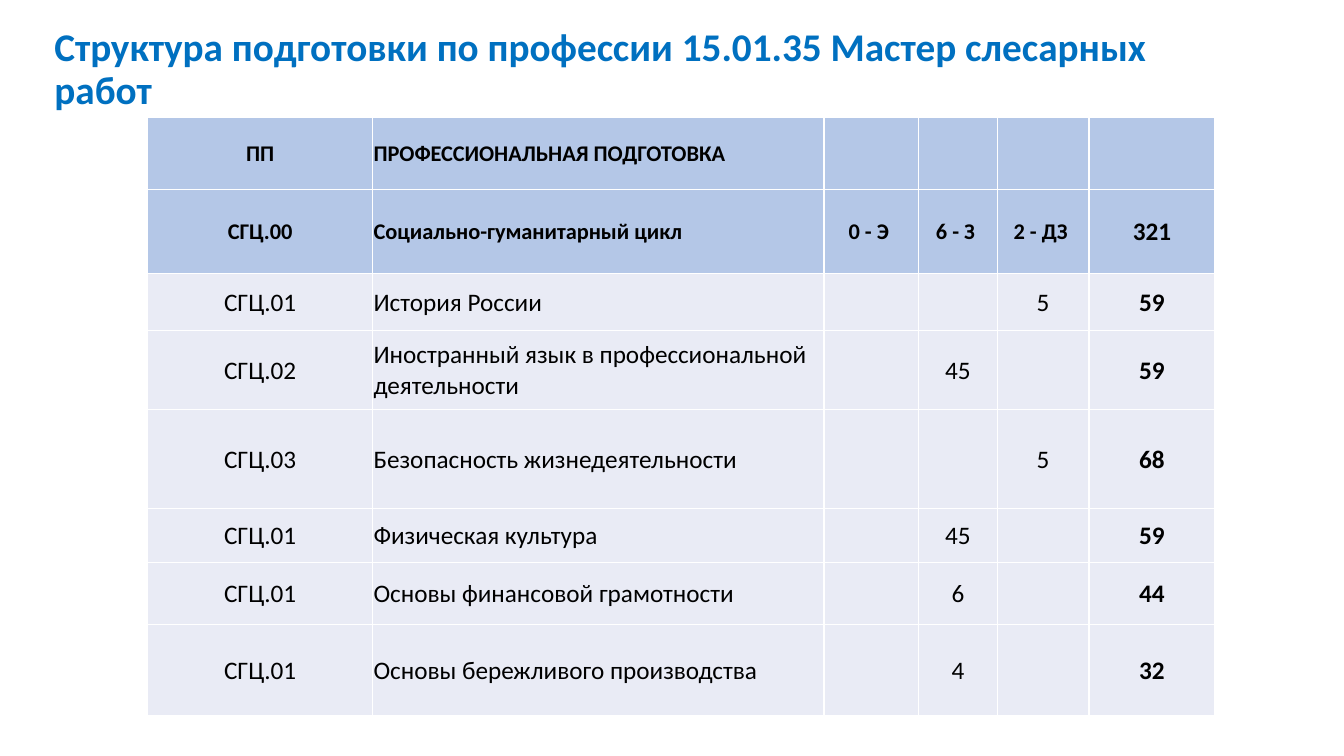
from dataclasses import dataclass

from lxml.etree import SubElement
from pptx import Presentation
from pptx.dml.color import RGBColor
from pptx.enum.text import MSO_ANCHOR, MSO_AUTO_SIZE, PP_ALIGN
from pptx.oxml import parse_xml
from pptx.oxml.ns import nsdecls, qn
from pptx.util import Inches, Pt


@dataclass(frozen=True)
class Theme:
    font: str = "Calibri"
    title_color: str = "0070C0"
    text_color: str = "000000"
    header_fill: str = "B4C7E7"
    row_fill: str = "E9EBF5"
    border_color: str = "FFFFFF"
    title_size: int = 28
    header_size: int = 16
    body_size: int = 18


@dataclass(frozen=True)
class Box:
    left: int
    top: int
    width: int
    height: int


THEME = Theme()
SLIDE_WIDTH, SLIDE_HEIGHT = Inches(13.33), Inches(7.5)

TITLE = "Структура подготовки по профессии 15.01.35 Мастер слесарных работ"
HEADER_ROWS = 2
NAME_COLUMN, HOURS_COLUMN = 1, 5
# Relative widths of the columns and heights of the rows
COLUMN_SHARES = [2.23, 4.48, 0.94, 0.78, 0.91, 1.25]
ROW_SHARES = [0.72, 0.83, 0.56, 0.79, 0.98, 0.53, 0.62, 0.9]
CURRICULUM = [
    ["ПП", "ПРОФЕССИОНАЛЬНАЯ ПОДГОТОВКА", "", "", "", ""],
    ["СГЦ.00", "Социально-гуманитарный цикл", "0 - Э ", "6 - З ", "2 - ДЗ ", "321"],
    ["СГЦ.01", "История России", "", "", "5", "59"],
    ["СГЦ.02", "Иностранный язык в профессиональной деятельности", "", "45", "", "59"],
    ["СГЦ.03", "Безопасность жизнедеятельности", "", "", "5", "68"],
    ["СГЦ.01", "Физическая культура", "", "45", "", "59"],
    ["СГЦ.01", "Основы финансовой грамотности", "", "6", "", "44"],
    ["СГЦ.01", "Основы бережливого производства", "", "4", "", "32"],
]


def share_box(left, top, width, height):
    """Turn shares of the slide's size into a box."""
    return Box(int(SLIDE_WIDTH * left), int(SLIDE_HEIGHT * top),
               int(SLIDE_WIDTH * width), int(SLIDE_HEIGHT * height))


def set_font(para, size, color, bold):
    font = para.font
    font.name, font.size, font.bold = THEME.font, Pt(size), bold
    font.color.rgb = RGBColor.from_string(color)


def add_borders(cell):
    properties = cell._tc.get_or_add_tcPr()
    for index, side in enumerate(("lnL", "lnR", "lnT", "lnB")):
        line = parse_xml(f'<a:{side} {nsdecls("a")} w="{Pt(1)}"/>')
        fill = SubElement(line, qn("a:solidFill"))
        SubElement(fill, qn("a:srgbClr"), val=THEME.border_color)
        properties.insert(index, line)


def fill_title(page, box):
    title = page.shapes.title
    title.left, title.top, title.width, title.height = box.left, box.top, box.width, box.height
    frame = title.text_frame
    frame.text = TITLE
    frame.word_wrap = True
    frame.auto_size = MSO_AUTO_SIZE.NONE
    frame.vertical_anchor = MSO_ANCHOR.MIDDLE
    para = frame.paragraphs[0]
    para.alignment, para.line_spacing = PP_ALIGN.LEFT, 0.9
    set_font(para, THEME.title_size, THEME.title_color, True)


def fill_cell(cell, text, row, column):
    is_header, is_hours = row < HEADER_ROWS, column == HOURS_COLUMN
    cell.fill.solid()
    cell.fill.fore_color.rgb = RGBColor.from_string(
        THEME.header_fill if is_header else THEME.row_fill)
    cell.margin_left = cell.margin_right = cell.margin_top = Inches(0.01)
    cell.margin_bottom = 0
    cell.vertical_anchor = MSO_ANCHOR.MIDDLE
    cell.text = text
    para = cell.text_frame.paragraphs[0]
    para.alignment = PP_ALIGN.LEFT if column == NAME_COLUMN else PP_ALIGN.CENTER
    size = THEME.header_size if is_header and not is_hours else THEME.body_size
    set_font(para, size, THEME.text_color, is_header or is_hours)
    add_borders(cell)


def add_curriculum(page, box):
    table = page.shapes.add_table(len(ROW_SHARES), len(COLUMN_SHARES),
                                  box.left, box.top, box.width, box.height).table
    for column, share in zip(table.columns, COLUMN_SHARES):
        column.width = int(box.width * share / sum(COLUMN_SHARES))
    for row, share in zip(table.rows, ROW_SHARES):
        row.height = int(box.height * share / sum(ROW_SHARES))
    for row, texts in enumerate(CURRICULUM):
        for column, text in enumerate(texts):
            fill_cell(table.cell(row, column), text, row, column)


def main():
    deck = Presentation()
    deck.slide_width, deck.slide_height = SLIDE_WIDTH, SLIDE_HEIGHT
    page = deck.slides.add_slide(deck.slide_layouts[5])  # title only
    # Heading
    fill_title(page, share_box(0.033, 0.053, 0.899, 0.08))
    # Curriculum table
    add_curriculum(page, share_box(0.11, 0.155, 0.794, 0.792))
    deck.save("out.pptx")


if __name__ == "__main__":
    main()
